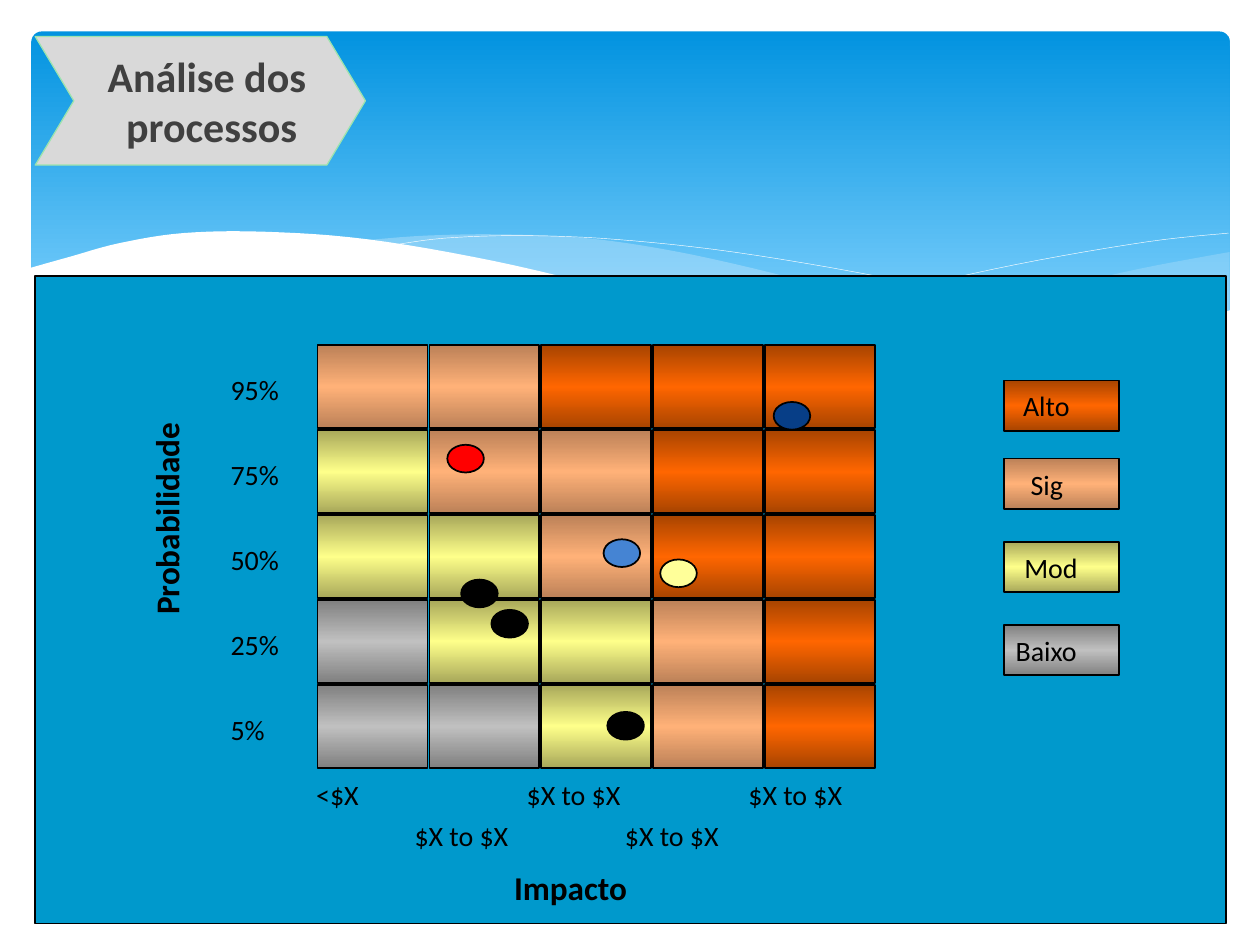
from dataclasses import dataclass
from pptx import Presentation
from pptx.dml.color import RGBColor as Rgb
from pptx.enum.shapes import MSO_SHAPE as Kind
from pptx.enum.text import MSO_ANCHOR as Anchor, MSO_AUTO_SIZE as Fit, PP_ALIGN as Align
from pptx.oxml import parse_xml as to_xml
from pptx.oxml.ns import nsdecls
from pptx.util import Inches, Pt

COLS, ROWS = 100, 75
UNIT = Inches(10) // COLS


@dataclass(frozen=True)
class Theme:
    font: str = "Calibri"
    head: int = 24
    axis: int = 19
    body: int = 16
    ink: str = "000000"
    title: str = "404040"
    panel: str = "0099CC"
    arrow: str = "D9D9D9"
    edge: str = "9DE3AE"
    white: str = "FFFFFF"
    wave: str = "C6E7FC"
    sky: tuple = ((0, "0293E0"), (90, "83D3FE"))


LOOK = Theme()
LEVELS = {
    "A": ("A84400", "FF6600"),
    "S": ("BC8158", "FFB178"),
    "M": ("A8A85A", "FEFF8A"),
    "B": ("808080", "C0C0C0"),
}


@dataclass(frozen=True)
class Box:
    x: float
    y: float
    w: float
    h: float

    def sub(self, x, y, w, h):
        return Box(self.x + x, self.y + y, w, h)

    def emu(self):
        return [round(n * UNIT) for n in (self.x, self.y, self.w, self.h)]


def put(item, form):
    for key, val in form.items():
        setattr(item, key, val)


def grad(shape, stops):
    marks = "".join(
        f'<a:gs pos="{pos * 1000}"><a:srgbClr val="{tint}"/></a:gs>' for pos, tint in stops
    )
    shape._element.spPr.insert(2, to_xml(
        f'<a:gradFill rotWithShape="1" {nsdecls("a")}><a:gsLst>{marks}</a:gsLst>'
        '<a:lin ang="5400000" scaled="0"/></a:gradFill>'
    ))


def paint(shape, fill=None, line=None, width=1):
    shape.shadow.inherit = False
    if isinstance(fill, tuple):
        grad(shape, fill)
    elif fill:
        shape.fill.solid()
        shape.fill.fore_color.rgb = Rgb.from_string(fill)
    else:
        shape.fill.background()
    if line:
        shape.line.color.rgb = Rgb.from_string(line)
        shape.line.width = Pt(width)
    else:
        shape.line.fill.background()
    return shape


def draw(slide, kind, box, fill, line=None, width=1):
    return paint(slide.shapes.add_shape(kind, *box.emu()), fill, line, width)


def tile(slide, box, level):
    dark, light = LEVELS[level]
    return draw(slide, Kind.RECTANGLE, box, ((0, dark), (50, light), (100, dark)), LOOK.ink)


def write(shape, text, size, tint=LOOK.ink, bold=False, align=Align.LEFT, **form):
    frame = shape.text_frame
    base = dict.fromkeys(("margin_left", "margin_right", "margin_top", "margin_bottom"), 0)
    put(frame, {**base, "word_wrap": True, "auto_size": Fit.NONE, **form})
    frame.text = text
    for para in frame.paragraphs:
        para.alignment = align
        for run in para.runs:
            put(run.font, {"name": LOOK.font, "size": Pt(size), "bold": bold})
            run.font.color.rgb = Rgb.from_string(tint)


def label(slide, box, text, size=LOOK.body, bold=False, turn=0):
    area = slide.shapes.add_textbox(*box.emu())
    area.rotation = turn
    write(area, text, size, bold=bold)


def curve(knots, steps=6):
    ends = [knots[0], *knots, knots[-1]]
    path = [knots[0]]
    for a, b, c, d in zip(ends, ends[1:], ends[2:], ends[3:]):
        for k in range(1, steps + 1):
            t = k / steps
            path.append(tuple(
                (2 * q + (r - p) * t + (2 * p - 5 * q + 4 * r - s) * t ** 2
                 + (3 * q - p - 3 * r + s) * t ** 3) / 2
                for p, q, r, s in zip(a, b, c, d)
            ))
    return path


def wave(slide, box, parts, fill=None, alpha=None, line=None):
    dots = [(round((box.x + x) * UNIT), round((box.y + y) * UNIT))
            for part in parts for x, y in curve(part)]
    pen = slide.shapes.build_freeform(*dots[0], scale=1.0)
    pen.add_line_segments(dots[1:], close=bool(fill))
    shape = paint(pen.convert_to_shape(), fill, line, 0.25)
    if alpha:
        tint = shape._element.spPr.find(".//{*}srgbClr")
        tint.append(to_xml(f'<a:alpha val="{alpha * 1000}" {nsdecls("a")}/>'))


def banner(slide, box):
    sky = draw(slide, Kind.ROUNDED_RECTANGLE, box, LOOK.sky)
    sky.adjustments[0] = 0.03
    wave(slide, box, (
        ((95.1, 17.5), (88.1, 18.8), (80.7, 20.5), (72.8, 22.3), (64.1, 24)),
        ((69.4, 24.7), (77.8, 25.3), (85.6, 24.8), (91.7, 23.4), (95.1, 22.2)),
    ), LOOK.wave, 29)
    wave(slide, box, (
        ((86.8, 24.8), (78.2, 23.5), (68.1, 21.5), (57.3, 18.8), (50.3, 17.3),
         (44, 16.4), (37.4, 16.1), (31.3, 16.2), (26.1, 16.6)),
        ((33.7, 17.8), (42.4, 19.7), (54.1, 22.3), (64, 24.2), (73.6, 25.2),
         (80.3, 25.3), (86.8, 24.8)),
    ), LOOK.wave, 40)
    wave(slide, box, (
        ((28.4, 17), (32.8, 16.4), (39.1, 16.2), (46.4, 16.5), (55.7, 17.5),
         (67, 19.4), (77, 21.6), (88.2, 24.7)),
    ), line=LOOK.white)
    wave(slide, box, (
        ((58.8, 23.2), (67, 21), (78.1, 18.5), (88.5, 16.7), (95, 16)),
    ), line=LOOK.white)
    wave(slide, box, (
        ((95.2, 22.1), (88.5, 24.2), (78.4, 25.2), (68.3, 24.5), (57.8, 22.9),
         (47.8, 20.8), (36.6, 18.2), (26.7, 16.5), (18.6, 15.9), (12.1, 16),
         (7, 16.8), (3, 17.9), (-0.2, 18.8)),
        ((-0.2, 30.4), (95.2, 30.4)),
    ), LOOK.white)


def matrix(slide, box):
    wide, high = box.w / 5, box.h / 5
    for r, row in enumerate(("SSAAA", "MSSAA", "MMSAA", "BMMSA", "BBMSA")):
        for c, level in enumerate(row):
            tile(slide, box.sub(c * wide, r * high, wide - 0.15, high - 0.15), level)
    for r, text in enumerate(("95%", "75%", "50%", "25%", "5%")):
        label(slide, box.sub(-6.9, 2.2 + r * high, 6, 2.7), text)
    for c, x in enumerate((-0.1, 16.6, 34.2, 7.7, 24.4)):
        label(slide, box.sub(x, 34.3 + c // 3 * 3.3, 11.5, 2.7), "$X to $X" if c else "<$X")
    for x, y, tint in (
        (36.2, 4.5, "073E87"), (11.4, 18.6, LOOK.ink), (23, 29.1, LOOK.ink),
        (13.8, 21, LOOK.ink), (27.2, 17, "FFFF99"), (22.7, 15.4, "4584D3"),
        (10.3, 7.9, "FF0000"),
    ):
        draw(slide, Kind.OVAL, box.sub(x, y, 2.9, 2.2), tint, LOOK.ink)
    label(slide, box.sub(-20.2, 10.5, 17.5, 4.3), "Probabilidade", LOOK.axis, True, 270)
    label(slide, box.sub(15.6, 41.4, 13.7, 3.2), "Impacto", LOOK.axis, True)


def legend(slide, box):
    for text, y, inset in (("Alto", 0, 1.5), ("Sig", 6.2, 2.1),
                           ("Mod", 12.8, 1.6), ("Baixo", 19.4, 0.9)):
        shape = tile(slide, box.sub(0, y, box.w, 4), text[0])
        write(shape, text, LOOK.body, vertical_anchor=Anchor.MIDDLE,
              margin_left=round(inset * UNIT))


def header(slide, box):
    arrow = draw(slide, Kind.CHEVRON, box, LOOK.arrow, LOOK.edge, 0.75)
    arrow.adjustments[0] = 0.3
    title = slide.shapes.title
    slide.shapes._spTree.append(title._element)
    put(title, dict(zip(("left", "top", "width", "height"),
                        box.sub(0.9, 0, box.w, box.h).emu())))
    write(title, "Análise dos \nprocessos", LOOK.head, LOOK.title, True,
          Align.CENTER, vertical_anchor=Anchor.MIDDLE)


def main():
    deck = Presentation()
    put(deck, {"slide_width": COLS * UNIT, "slide_height": ROWS * UNIT})
    slide = deck.slides.add_slide(deck.slide_layouts[5])
    banner(slide, Box(2.5, 2.5, 95.1, 27))
    panel = Box(2.8, 21.9, 94.5, 51.4)
    draw(slide, Kind.RECTANGLE, panel, LOOK.panel, LOOK.ink)
    matrix(slide, panel.sub(22.4, 5.5, 44.4, 33.7))
    legend(slide, panel.sub(76.9, 8.3, 9.1, 23.4))
    header(slide, Box(2.8, 2.9, 26.2, 10.2))
    deck.save("out.pptx")


if __name__ == "__main__":
    main()
